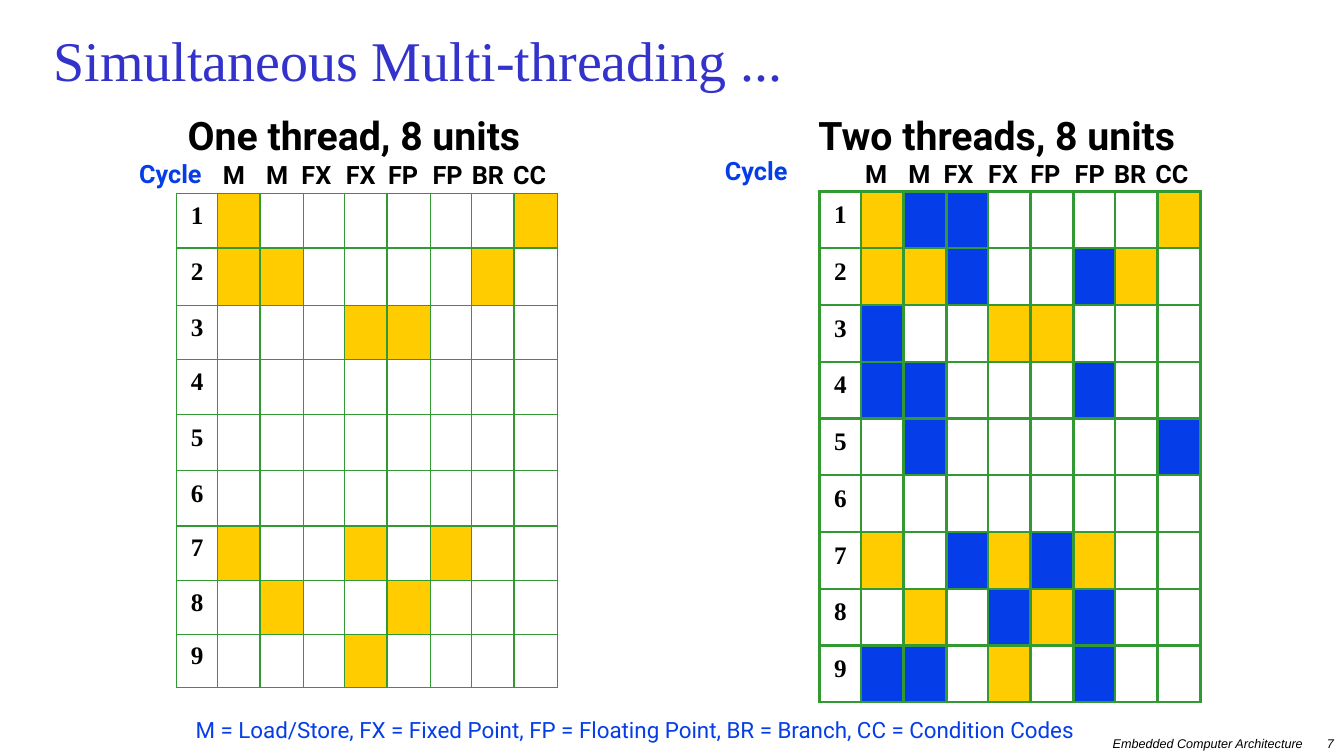
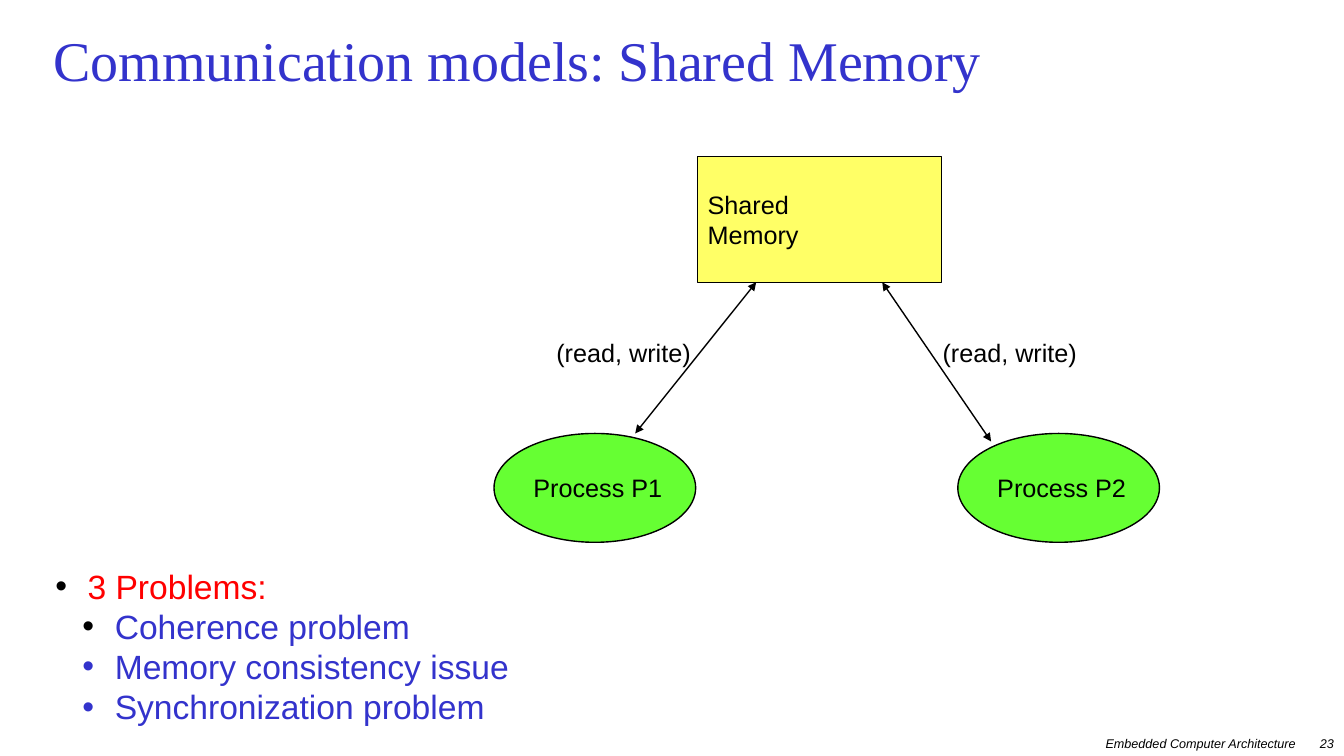
import pptx
import pptx.util
import pptx.dml.color
import pptx.enum.shapes
import pptx.enum.text
import pptx.oxml.ns
from lxml import etree

Inches, Pt = pptx.util.Inches, pptx.util.Pt
RGB = pptx.dml.color.RGBColor.from_string
SHAPE = pptx.enum.shapes.MSO_SHAPE
ALIGN = pptx.enum.text.PP_ALIGN
ANCHOR = pptx.enum.text.MSO_ANCHOR
qn = pptx.oxml.ns.qn


class Theme:
    black, indigo, blue = RGB("000000"), RGB("3333CC"), RGB("053DE8")
    red, gold, green = RGB("FF0000"), RGB("FFCC00"), RGB("66FF33")
    yellow, grid = RGB("FFFF66"), "339933"
    serif, sans, label = "Times New Roman", "Arial", "Roboto"
    title, heading, bullet = Pt(40), Pt(28), Pt(24)
    body, legend, footer = Pt(18), Pt(16), Pt(9)


prs = pptx.Presentation()
prs.slide_width, prs.slide_height = Inches(13.33), Inches(7.5)


def add_text(s, text, x, y, w, h, size=Theme.body, font=Theme.label, color=Theme.black,
             bold=False, italic=False, align=ALIGN.LEFT, inset=(0, 0)):
    """Add a one-paragraph text box and return its paragraph."""
    tf = s.shapes.add_textbox(Inches(x), Inches(y), Inches(w), Inches(h)).text_frame
    tf.word_wrap = True
    tf.margin_left = tf.margin_right = Inches(inset[0])
    tf.margin_top = tf.margin_bottom = Inches(inset[1])
    p = tf.paragraphs[0]
    p.text, p.alignment = text, align
    p.font.size, p.font.name, p.font.color.rgb = size, font, color
    p.font.bold, p.font.italic = bold, italic
    return p


def add_slide(title, number):
    """Add a slide with the shared title style and footer."""
    s = prs.slides.add_slide(prs.slide_layouts[5])
    sp = s.shapes.title
    sp.left, sp.top, sp.width, sp.height = Inches(0.43), Inches(0.25), Inches(12.46), Inches(0.8)
    tf = sp.text_frame
    tf.text = title
    tf.auto_size = pptx.enum.text.MSO_AUTO_SIZE.NONE
    tf.vertical_anchor = ANCHOR.MIDDLE
    p = tf.paragraphs[0]
    p.alignment, p.line_spacing = ALIGN.LEFT, 0.8
    p.font.size, p.font.name, p.font.color.rgb = Theme.title, Theme.serif, Theme.indigo
    # The footer label ends a fixed gap before the page number
    label_right = 12.99 - 0.07 * len(number)
    for text, right, width in (("Embedded Computer Architecture", label_right, 3),
                               (number, 13.23, 0.3)):
        add_text(s, text, right - width, 7.25, width, 0.25, Theme.footer, Theme.sans,
                 italic=True, align=ALIGN.RIGHT, inset=(0, 0.05))
    return s


# Slide 1: issue slots per cycle, A = first thread, B = second thread
s = add_slide("Simultaneous Multi-threading ...", "7")

units = ["M", "M", "FX", "FX", "FP", "FP", "BR", "CC"]
unit_offsets = [0.46, 0.89, 1.24, 1.68, 2.1, 2.54, 2.93, 3.34]
col_widths = [0.41, 0.42, 0.43] * 3
thread_fills = {"A": Theme.gold, "B": Theme.blue}
one_thread = ["A......A", "AA....A.", "...AA...", "........", "........",
              "........", "A..A.A..", ".A..A...", "...A...."]
two_threads = ["ABB....A", "AAB..BA.", "B..AA...", "BB...B..", ".B.....B",
               "........", "A.BABA..", ".A.BAB..", "BB.A.B.."]
charts = [
    dict(heading="One thread, 8 units", heading_x=1.31, heading_w=4.4, cycle=(1.38, 1.57),
         units=(1.75, 1.58), grid=(1.75, 1.92), slots=one_thread, line=1,
         rows=[0.54, 0.57, 0.54, 0.54, 0.56, 0.55, 0.54, 0.54, 0.52]),
    dict(heading="Two threads, 8 units", heading_x=7.59, heading_w=4.59, cycle=(7.19, 1.54),
         units=(8.12, 1.57), grid=(8.13, 1.9), slots=two_threads, line=2,
         rows=[5.07 / 9] * 9),
]

for c in charts:
    # Grid
    x, y = c["grid"]
    table = s.shapes.add_table(len(c["slots"]), len(col_widths), Inches(x), Inches(y),
                               Inches(sum(col_widths)), Inches(sum(c["rows"]))).table
    table.first_row = table.horz_banding = False
    for col, width in zip(table.columns, col_widths):
        col.width = Inches(width)
    for i, (row, height, slots) in enumerate(zip(table.rows, c["rows"], c["slots"]), 1):
        row.height = Inches(height)
        for cell, slot in zip(row.cells, "." + slots):
            # Borders come before the fill in the cell properties
            tcPr = cell._tc.get_or_add_tcPr()
            for side in ("a:lnL", "a:lnR", "a:lnT", "a:lnB"):
                ln = etree.SubElement(tcPr, qn(side), w=str(Pt(c["line"])))
                fill = etree.SubElement(ln, qn("a:solidFill"))
                etree.SubElement(fill, qn("a:srgbClr"), val=Theme.grid)
            if slot in thread_fills:
                cell.fill.solid()
                cell.fill.fore_color.rgb = thread_fills[slot]
            else:
                cell.fill.background()
        cell = row.cells[0]
        cell.vertical_anchor = ANCHOR.MIDDLE
        cell.margin_left = cell.margin_right = Inches(0.09)
        cell.margin_top = cell.margin_bottom = Inches(0.04)
        p = cell.text_frame.paragraphs[0]
        p.text, p.alignment = str(i), ALIGN.CENTER
        p.line_spacing, p.space_before = Pt(13), Pt(3.6)
        p.font.size, p.font.name, p.font.bold = Theme.body, Theme.serif, True
        p.font.color.rgb = Theme.black

    # Headings above the grid
    x, y = c["units"]
    for unit, offset in zip(units, unit_offsets):
        add_text(s, unit, x + offset, y, 0.54, 0.3, bold=True)
    add_text(s, "Cycle", *c["cycle"], 0.92, 0.3, color=Theme.blue, bold=True)
    p = add_text(s, c["heading"], c["heading_x"], 1.15, c["heading_w"], 0.43,
                 Theme.heading, bold=True, align=ALIGN.CENTER)
    p.line_spacing = Pt(30.6)

# Legend
add_text(s, "M = Load/Store, FX = Fixed Point, FP = Floating Point, BR = Branch, "
         "CC = Condition Codes", 1.94, 7.1, 9.34, 0.27, Theme.legend, color=Theme.blue)

# Slide 2: two processes around a shared memory
s = add_slide("Communication models: Shared Memory", "23")

nodes = [
    (SHAPE.OVAL, "Process P1", 4.9, 4.3, 2, 1.08, Theme.green),
    (SHAPE.OVAL, "Process P2", 9.5, 4.3, 2, 1.08, Theme.green),
    (SHAPE.RECTANGLE, "Shared\nMemory", 6.92, 1.55, 2.42, 1.25, Theme.yellow),
]
for kind, text, x, y, w, h, color in nodes:
    sp = s.shapes.add_shape(kind, Inches(x), Inches(y), Inches(w), Inches(h))
    sp.shadow.inherit = False
    sp.fill.solid()
    sp.fill.fore_color.rgb = color
    sp.line.color.rgb, sp.line.width = Theme.black, Pt(1)
    tf = sp.text_frame
    tf.text, tf.word_wrap, tf.vertical_anchor = text, False, ANCHOR.MIDDLE
    for p in tf.paragraphs:
        p.alignment = ALIGN.LEFT
        p.font.size, p.font.name, p.font.color.rgb = Theme.body, Theme.sans, Theme.black

# Double-headed arrows with their labels
for x1, y1, x2, y2, label_x in ((6.3, 4.3, 7.5, 2.8, 5.42), (9.83, 4.38, 8.75, 2.8, 9.25)):
    line = s.shapes.add_connector(pptx.enum.shapes.MSO_CONNECTOR.STRAIGHT,
                                  Inches(x1), Inches(y1), Inches(x2), Inches(y2))
    line.line.color.rgb, line.line.width = Theme.black, Pt(1)
    ln = line.line._get_or_add_ln()
    for end in ("a:headEnd", "a:tailEnd"):
        etree.SubElement(ln, qn(end), type="triangle")
    etree.SubElement(line._element.spPr, qn("a:effectLst"))
    add_text(s, "(read, write)", label_x, 3.3, 1.7, 0.4, font=Theme.sans, inset=(0.1, 0.05))

# Problem list: text, level, text colour, bullet colour
problems = [
    ("3 Problems:", 0, Theme.red, Theme.black),
    ("Coherence problem", 1, Theme.indigo, Theme.black),
    ("Memory consistency issue", 1, Theme.indigo, Theme.indigo),
    ("Synchronization problem", 1, Theme.indigo, Theme.indigo),
]
tf = s.shapes.add_textbox(Inches(0.45), Inches(5.56), Inches(4.87), Inches(1.72)).text_frame
tf.word_wrap = True
for i, (text, level, color, bullet_color) in enumerate(problems):
    p = tf.add_paragraph() if i else tf.paragraphs[0]
    p.text, p.level = text, level
    p.font.size, p.font.name, p.font.color.rgb = Theme.bullet, Theme.sans, color
    pPr = p._p.get_or_add_pPr()
    pPr.set("marL", str(Inches(0.32 + 0.27 * level)))
    pPr.set("indent", str(Inches(-0.32)))
    buClr = etree.Element(qn("a:buClr"))
    etree.SubElement(buClr, qn("a:srgbClr"), val=str(bullet_color))
    buFont = etree.Element(qn("a:buFont"), typeface=Theme.sans)
    buChar = etree.Element(qn("a:buChar"), char="•")
    # Bullet properties sit just before the default run properties
    defRPr = pPr.find(qn("a:defRPr"))
    for bullet in (buClr, buFont, buChar):
        defRPr.addprevious(bullet)

prs.save("out.pptx")
